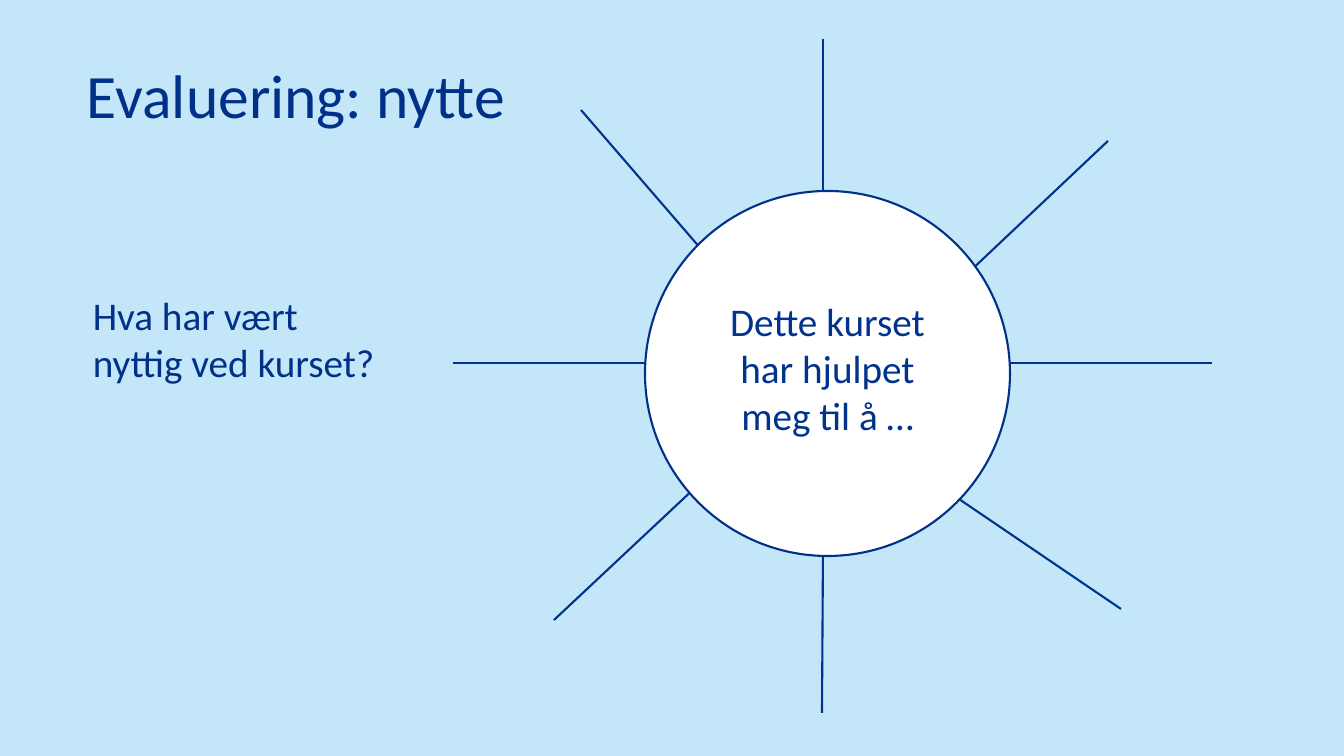
import dataclasses

import lxml.etree
import pptx
import pptx.dml.color
import pptx.enum.shapes
import pptx.enum.text
import pptx.oxml.ns
import pptx.util

EMU_PER_PX = 914400 / 100.8
ALIGN = pptx.enum.text.PP_ALIGN
ANCHOR = pptx.enum.text.MSO_ANCHOR


@dataclasses.dataclass(frozen=True)
class Theme:
    sky: str = "C3E6F8"
    disc: str = "FFFFFF"
    navy: str = "003087"
    ray: str = "00338D"
    font: str = "Calibri"
    title_size: int = 44
    body_size: int = 28
    line_width: float = 1.5


THEME = Theme()

# Ray ends (x1, y1, x2, y2) in px from the corner of the sun's box
RAYS = [
    (370, 0, 370, 168),
    (244, 447, 101, 581),
    (655, 102, 513, 236),
    (668, 570, 503, 458),
    (128, 71, 255, 218),
    (759, 324, 548, 324),
    (202, 324, 0, 324),
    (370, 512, 369, 674),
]


def px(length):
    return pptx.util.Emu(round(length * EMU_PER_PX))


def rgb(code):
    return pptx.dml.color.RGBColor.from_string(code)


def write_text(shape, text, *, size, color, align=ALIGN.LEFT, anchor=ANCHOR.TOP,
               spacing=1.0, top_inset=5):
    frame = shape.text_frame
    frame.word_wrap = True
    frame.vertical_anchor = anchor
    frame.margin_top = px(top_inset)
    para = frame.paragraphs[0]
    para.alignment = align
    para.line_spacing = spacing
    span = para.add_run()
    span.text = text
    span.font.name = THEME.font
    span.font.size = pptx.util.Pt(size)
    span.font.color.rgb = rgb(color)


def set_line(shape, color):
    shape.line.color.rgb = rgb(color)
    shape.line.width = pptx.util.Pt(THEME.line_width)


def add_text_region(page, box, text, **text_format):
    text_box = page.shapes.add_textbox(*map(px, box))
    write_text(text_box, text, **text_format)


def add_sun(page, box, text):
    left, top, _, _ = box

    # Rays, drawn behind the disc
    for x1, y1, x2, y2 in RAYS:
        ray = page.shapes.add_connector(
            pptx.enum.shapes.MSO_CONNECTOR.STRAIGHT,
            px(left + x1), px(top + y1), px(left + x2), px(top + y2))
        set_line(ray, THEME.ray)
        lxml.etree.SubElement(ray._element.spPr, pptx.oxml.ns.qn("a:effectLst"))

    # Disc with its sentence
    disc = page.shapes.add_shape(
        pptx.enum.shapes.MSO_SHAPE.OVAL,
        px(left + 192), px(top + 152), px(365), px(365))
    disc.shadow.inherit = False
    disc.fill.solid()
    disc.fill.fore_color.rgb = rgb(THEME.disc)
    set_line(disc, THEME.navy)
    write_text(disc, text, size=THEME.body_size, color=THEME.ray,
               align=ALIGN.CENTER, top_inset=53)


def main():
    deck = pptx.Presentation()
    deck.slide_width, deck.slide_height = px(1344), px(756)
    page = deck.slides.add_slide(deck.slide_layouts[6])
    page.background.fill.solid()
    page.background.fill.fore_color.rgb = rgb(THEME.sky)

    add_sun(page, (453, 39, 759, 674), "Dette kurset har hjulpet meg til å …")

    # Title and question
    add_text_region(page, (77, 60, 1159, 78), "Evaluering: nytte",
                    size=THEME.title_size, color=THEME.navy,
                    anchor=ANCHOR.MIDDLE, spacing=0.9)
    add_text_region(page, (83, 286, 317, 105), "Hva har vært nyttig ved kurset?",
                    size=THEME.body_size, color=THEME.navy)

    deck.save("out.pptx")


if __name__ == "__main__":
    main()
